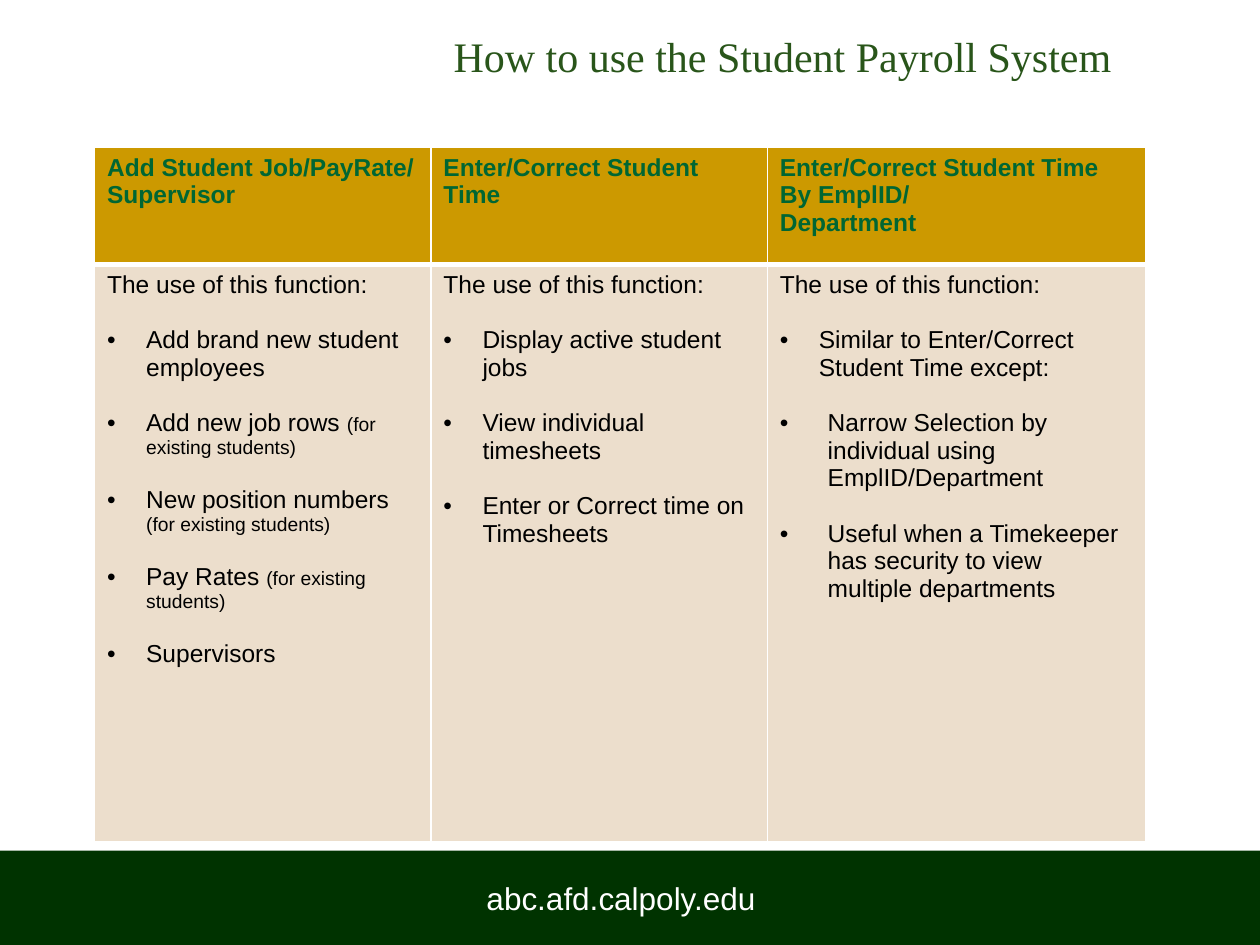
import pptx
import pptx.util
import pptx.dml.color
import pptx.enum.shapes
import pptx.enum.text
import pptx.oxml.ns
import lxml.etree

Inches = pptx.util.Inches
Pt = pptx.util.Pt
RGBColor = pptx.dml.color.RGBColor
qn = pptx.oxml.ns.qn
ALIGN = pptx.enum.text.PP_ALIGN
MIDDLE = pptx.enum.text.MSO_ANCHOR.MIDDLE

WHITE = RGBColor(0xFF, 0xFF, 0xFF)
BLACK = RGBColor(0, 0, 0)
PINE = RGBColor(0x00, 0x33, 0x00)
LEAF = RGBColor(0x29, 0x55, 0x1A)
GREEN = RGBColor(0x00, 0x66, 0x33)
GOLD = RGBColor(0xCC, 0x99, 0x00)
SAND = RGBColor(0xEC, 0xDE, 0xCC)

INTRO = "The use of this function:"
NOTE = "(for existing students)"
# Each column: width, heading, list of (bullet, note, indent)
COLUMNS = [
    (2.67, "Add Student Job/PayRate/\nSupervisor", [
        ("Add brand new student employees", "", 0.31),
        ("Add new job rows ", NOTE, 0.31),
        ("New position numbers ", NOTE, 0.31),
        ("Pay Rates ", NOTE, 0.31),
        ("Supervisors", "", 0.31)]),
    (2.67, "Enter/Correct Student Time", [
        ("Display active student jobs", "", 0.31),
        ("View individual timesheets", "", 0.31),
        ("Enter or Correct time on Timesheets", "", 0.31)]),
    (3, "Enter/Correct Student Time By EmplID/\nDepartment", [
        ("Similar to Enter/Correct Student Time except:", "", 0.31),
        ("Narrow Selection by individual using EmplID/Department", "", 0.38),
        ("Useful when a Timekeeper has security to view multiple departments",
         "", 0.38)]),
]


def style(run, size, color, face="Arial", bold=False):
    run.font.size = Pt(size)
    run.font.name = face
    run.font.bold = bold
    run.font.color.rgb = color


def dress(cell, fill, top, bottom):
    """Give a cell white borders, in points, and a fill."""
    props = cell._tc.get_or_add_tcPr()
    for side, width in (("L", 1), ("R", 1), ("T", top), ("B", bottom)):
        line = lxml.etree.SubElement(props, qn("a:ln" + side), w=str(Pt(width)))
        solid = lxml.etree.SubElement(line, qn("a:solidFill"))
        lxml.etree.SubElement(solid, qn("a:srgbClr"), val=str(WHITE))
    cell.fill.solid()
    cell.fill.fore_color.rgb = fill


deck = pptx.Presentation()
deck.slide_width = Inches(10)
deck.slide_height = Inches(7.5)
slide = deck.slides.add_slide(deck.slide_layouts[6])

# Footer band
band = slide.shapes.add_shape(pptx.enum.shapes.MSO_SHAPE.RECTANGLE,
                              Inches(0), Inches(6.75), Inches(10), Inches(0.75))
band.shadow.inherit = False
band.fill.solid()
band.fill.fore_color.rgb = PINE
band.line.fill.background()
frame = band.text_frame
frame.text = "abc.afd.calpoly.edu"
frame.vertical_anchor = MIDDLE
frame.margin_right = Inches(0.24)
frame.paragraphs[0].alignment = ALIGN.CENTER
style(frame.paragraphs[0].runs[0], 18, WHITE)

# Title
title = slide.shapes.add_textbox(Inches(3), Inches(0.17), Inches(6.42), Inches(0.55))
frame = title.text_frame
frame.word_wrap = True
frame.text = "How to use the Student Payroll System"
frame.vertical_anchor = MIDDLE
frame.paragraphs[0].alignment = ALIGN.CENTER
style(frame.paragraphs[0].runs[0], 24, LEAF, "Times New Roman")

# Table of functions
table = slide.shapes.add_table(2, len(COLUMNS), Inches(0.75), Inches(1.17),
                               Inches(8.34), Inches(5.51)).table
table.rows[0].height = Inches(0.93)
table.rows[1].height = Inches(4.58)
for col, (width, heading, items) in enumerate(COLUMNS):
    table.columns[col].width = Inches(width)

    head = table.cell(0, col)
    dress(head, GOLD, 1, 3)
    head.text_frame.text = heading
    for para in head.text_frame.paragraphs:
        style(para.runs[0], 14, GREEN, bold=True)

    body = table.cell(1, col)
    dress(body, SAND, 3, 1)
    body.text_frame.text = INTRO
    style(body.text_frame.paragraphs[0].runs[0], 14, BLACK)
    for text, note, indent in items:
        para = body.text_frame.add_paragraph()
        para.text = text
        para.space_before = Pt(16)
        props = para._p.get_or_add_pPr()
        props.set("marL", str(Inches(indent)))
        props.set("indent", str(-Inches(indent)))
        lxml.etree.SubElement(props, qn("a:buFont"), typeface="Arial")
        lxml.etree.SubElement(props, qn("a:buChar"), char="•")
        style(para.runs[0], 14, BLACK)
        if note:
            run = para.add_run()
            run.text = note
            style(run, 11, BLACK)

deck.save("out.pptx")
